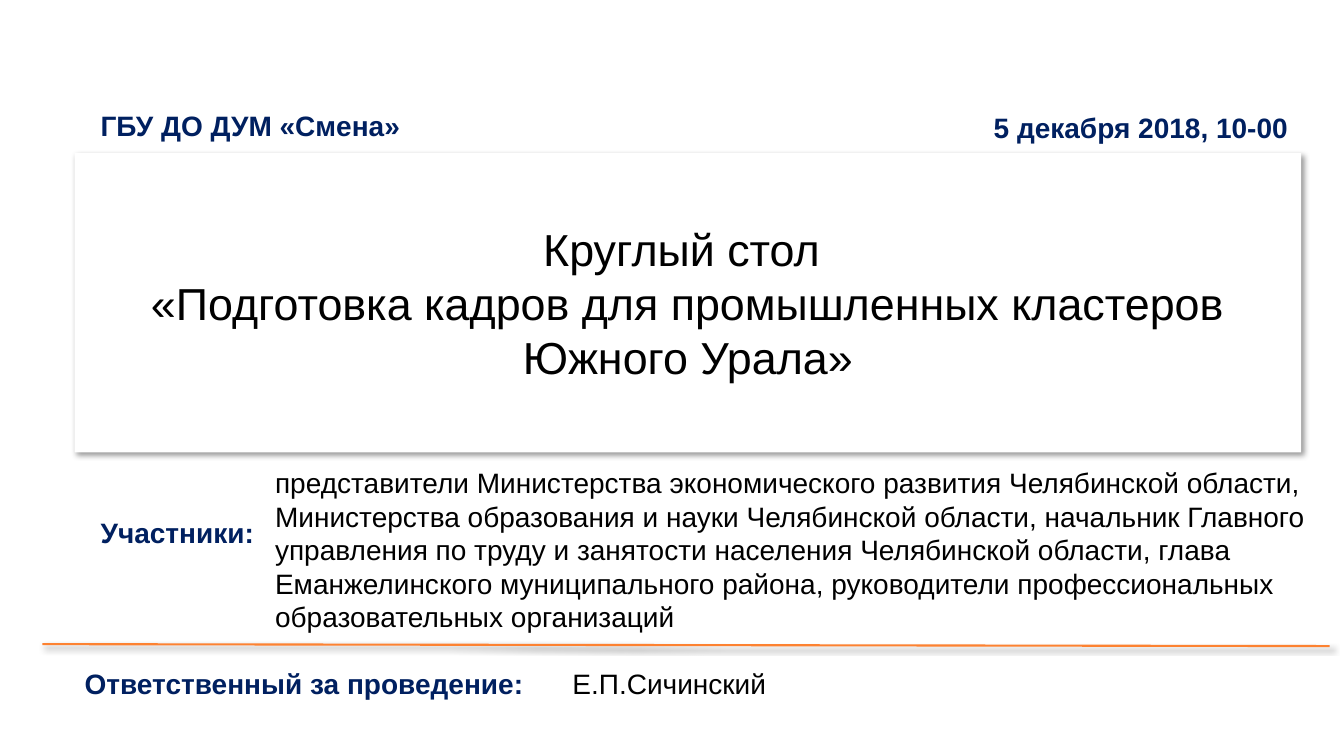
"""Builds the title slide of a round table on workforce training."""
from lxml import etree
from pptx import Presentation
from pptx.dml.color import RGBColor
from pptx.enum.shapes import MSO_CONNECTOR, MSO_SHAPE
from pptx.enum.text import MSO_ANCHOR, MSO_AUTO_SIZE, PP_ALIGN
from pptx.oxml import parse_xml
from pptx.oxml.ns import nsdecls, qn
from pptx.util import Pt

RECTANGLE = MSO_SHAPE.RECTANGLE
STRAIGHT = MSO_CONNECTOR.STRAIGHT
MIDDLE = MSO_ANCHOR.MIDDLE
CENTER = PP_ALIGN.CENTER
FIT_SHAPE = MSO_AUTO_SIZE.SHAPE_TO_FIT_TEXT

COLORS = {"white": "FFFFFF", "black": "000000", "navy": "002060", "orange": "FD8231"}
BODY = {"name": "Arial", "size": Pt(20), "bold": False}
LABEL = {**BODY, "bold": True}
TITLE = {**BODY, "size": Pt(32)}

TITLE_TEXT = "Круглый стол \v«Подготовка кадров для промышленных кластеров Южного Урала»"
PARTICIPANTS = (
    "представители Министерства экономического развития Челябинской области, "
    "Министерства образования и науки Челябинской области, начальник Главного "
    "управления по труду и занятости населения Челябинской области, глава "
    "Еманжелинского муниципального района, руководители профессиональных "
    "образовательных организаций"
)


def color(name):
    """Return the named colour."""
    return RGBColor.from_string(COLORS[name])


def format_text(paragraph, text, font_values, color_name):
    """Write text into a paragraph and set its font."""
    paragraph.text = text
    for attribute, value in font_values.items():
        setattr(paragraph.font, attribute, value)
    paragraph.font.color.rgb = color(color_name)


def add_shadow(shape):
    """Give a shape or connector a soft shadow to the lower right."""
    properties = shape._element.spPr
    for effects in properties.findall(qn("a:effectLst")):
        properties.remove(effects)
    effects = etree.SubElement(properties, qn("a:effectLst"))
    effects.append(parse_xml(
        f'<a:outerShdw {nsdecls("a")} blurRad="{Pt(4)}" dist="{Pt(3)}" dir="2700000" '
        f'algn="tl" rotWithShape="0"><a:srgbClr val="{COLORS["black"]}">'
        '<a:alpha val="40000"/></a:srgbClr></a:outerShdw>'
    ))


def add_title(slide, left, top, width, height):
    """Add the white title panel."""
    shape = slide.shapes.add_shape(RECTANGLE, Pt(left), Pt(top), Pt(width), Pt(height))
    shape.fill.solid()
    shape.fill.fore_color.rgb = color("white")
    shape.line.fill.background()
    add_shadow(shape)
    frame = shape.text_frame
    frame.word_wrap = True
    frame.vertical_anchor = MIDDLE
    paragraph = frame.paragraphs[0]
    format_text(paragraph, TITLE_TEXT, TITLE, "black")
    paragraph.alignment = CENTER


def add_text(slide, text, left, top, width, height, is_label):
    """Add a bold navy label or a wrapped black text."""
    box = slide.shapes.add_textbox(Pt(left), Pt(top), Pt(width), Pt(height))
    frame = box.text_frame
    frame.word_wrap = not is_label
    frame.auto_size = FIT_SHAPE
    font_values, color_name = (LABEL, "navy") if is_label else (BODY, "black")
    format_text(frame.paragraphs[0], text, font_values, color_name)


def add_divider(slide, left, top, right, bottom):
    """Add the orange line above the organiser."""
    line = slide.shapes.add_connector(STRAIGHT, Pt(left), Pt(top), Pt(right), Pt(bottom))
    line.line.color.rgb = color("orange")
    line.line.width = Pt(1.5)
    add_shadow(line)


def main():
    """Build and save the slide."""
    presentation = Presentation()
    presentation.slide_width, presentation.slide_height = Pt(960), Pt(540)
    slide = presentation.slides.add_slide(presentation.slide_layouts[6])
    add_title(slide, 53.3, 109.4, 876.2, 213.8)
    add_divider(slide, 30.2, 460.1, 949.7, 461.5)
    for text, left, top, width, height, is_label in (
        ("5 декабря 2018, 10-00", 702.7, 75.6, 226.1, 31.5, True),
        (PARTICIPANTS, 189.4, 329, 770.4, 128.4, False),
        ("Участники:", 64.8, 365, 125.3, 31.5, True),
        ("Ответственный за проведение:", 53.3, 472.3, 330.5, 31.5, True),
        ("Е.П.Сичинский", 401.8, 472.3, 480.2, 31.5, False),
        ("ГБУ ДО ДУМ «Смена»", 64.8, 74.2, 230.4, 31.5, True),
    ):
        add_text(slide, text, left, top, width, height, is_label)


    presentation.save("out.pptx")


if __name__ == "__main__":
    main()
